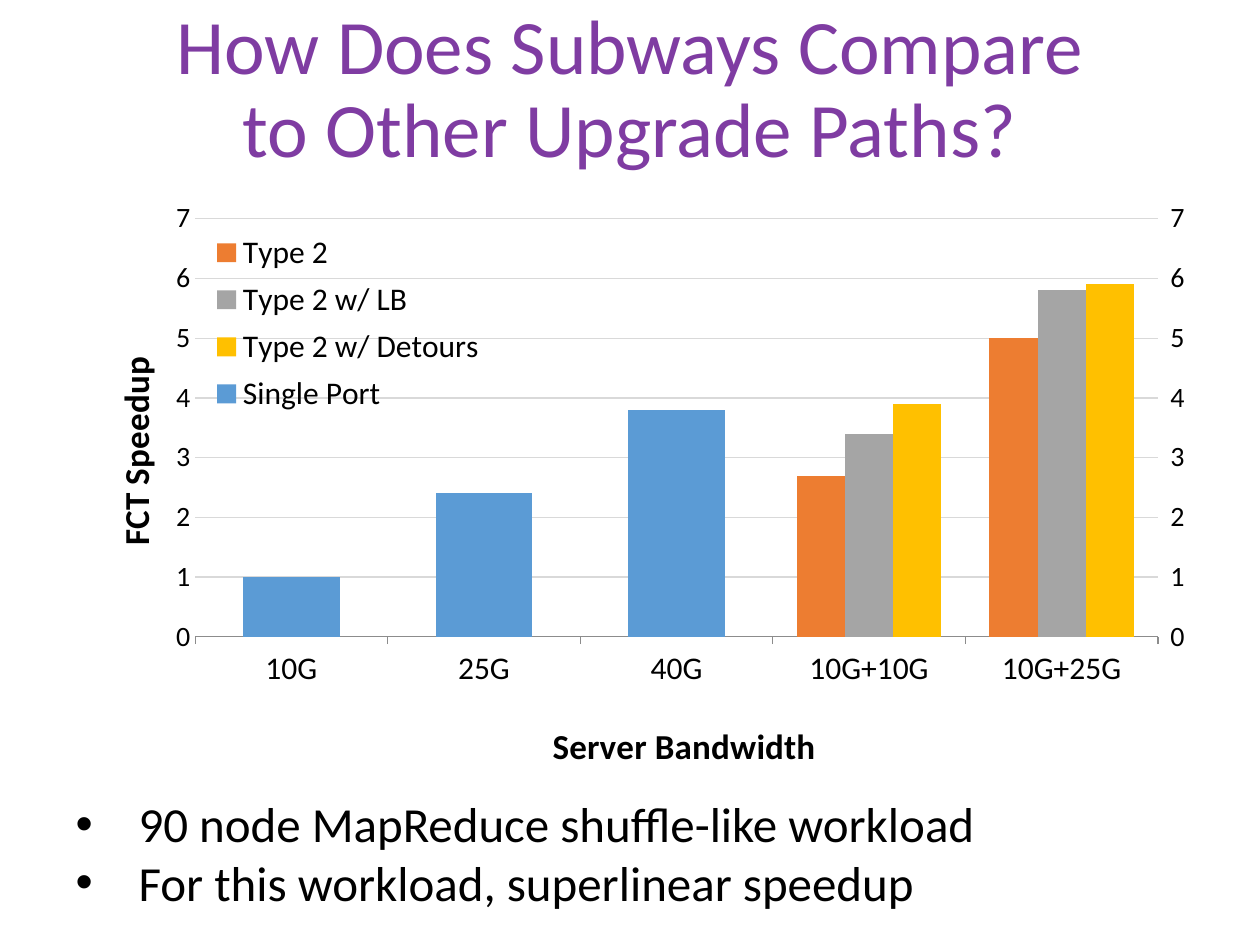
from copy import deepcopy
from typing import NamedTuple, Optional

from lxml import etree
from pptx import Presentation
from pptx import util as u
from pptx.chart.data import CategoryChartData
from pptx.dml.color import RGBColor
from pptx.enum import chart as ch, text
from pptx.oxml import parse_xml
from pptx.oxml.ns import nsdecls, qn

FONT = "Calibri"
COLORS = {
    "title": "7F3CA2", "text": "000000", "grid": "D9D9D9", "axis": "8C8C8C",
    "orange": "ED7D31", "gray": "A5A5A5", "yellow": "FFC000", "blue": "5B9BD5",
}
COLUMNS, ROWS = 10, 30


class Box(NamedTuple):
    """Place on the slide, in grid columns and rows."""
    col: float
    row: float
    cols: float
    rows: float


class Series(NamedTuple):
    name: str
    values: tuple[Optional[float], ...]
    color: str


CATEGORIES = ("10G", "25G", "40G", "10G+10G", "10G+25G")
SERIES = (
    Series("Type 2", (None, None, None, 2.7, 5), "orange"),
    Series("Type 2 w/ LB", (None, None, None, 3.4, 5.8), "gray"),
    Series("Type 2 w/ Detours", (None, None, None, 3.9, 5.9), "yellow"),
    Series("Single Port", (1, 2.4, 3.8, None, None), "blue"),
)
BULLETS = (
    "90 node MapReduce shuffle-like workload",
    "For this workload, superlinear speedup",
)


def rgb(name: str) -> RGBColor:
    return RGBColor.from_string(COLORS[name])


def lengths(prs, box: Box) -> tuple[int, ...]:
    w, h = prs.slide_width / COLUMNS, prs.slide_height / ROWS
    return tuple(round(n) for n in (box.col * w, box.row * h, box.cols * w, box.rows * h))


def place(prs, sp, box: Box) -> None:
    sp.left, sp.top, sp.width, sp.height = lengths(prs, box)


def style(font, size: float, color: str = "text", bold: bool = False) -> None:
    font.name, font.size, font.bold = FONT, u.Pt(size), bold
    font.color.rgb = rgb(color)


def set_layout(parent, index: int, inner: bool = False, **shares: float) -> None:
    """Fix the position of a chart part, in shares of the chart's size."""
    for old in parent.findall(qn("c:layout")):
        parent.remove(old)
    target = '<c:layoutTarget val="inner"/>' if inner else ""
    modes = "".join(f'<c:{k}Mode val="edge"/>' for k in "xy")
    values = "".join(f'<c:{k} val="{v}"/>' for k, v in shares.items())
    parent.insert(index, parse_xml(
        f'<c:layout {nsdecls("c")}><c:manualLayout>{target}{modes}{values}'
        "</c:manualLayout></c:layout>"))


def set_axis_title(axis, title: str, x: float, y: float) -> None:
    axis.has_title = True
    tf = axis.axis_title.text_frame
    tf.text = title
    style(tf.paragraphs[0].runs[0].font, 20, bold=True)
    set_layout(axis.axis_title._element, 1, x=x, y=y)


def move_last_series_right(chart) -> None:
    """Give the last series its own bar group and a value axis on the right."""
    area = chart._chartSpace.chart.plotArea
    bars = area.find(qn("c:barChart"))
    right_bars = deepcopy(bars)
    bars.remove(bars.findall(qn("c:ser"))[-1])
    for ser in right_bars.findall(qn("c:ser"))[:-1]:
        right_bars.remove(ser)
    bars.addnext(right_bars)

    cat, val = area.find(qn("c:catAx")), area.find(qn("c:valAx"))
    right_cat, right_val = deepcopy(cat), deepcopy(val)
    val.addnext(right_val)
    right_val.addnext(right_cat)
    ids = {cat.find(qn("c:axId")).get("val"): "5001",
           val.find(qn("c:axId")).get("val"): "5002"}
    for group in (right_bars, right_cat, right_val):
        for tag in ("c:axId", "c:crossAx"):
            for el in group.findall(qn(tag)):
                el.set("val", ids[el.get("val")])
    for axis in (right_cat, right_val):
        for tag in ("c:majorGridlines", "c:title"):
            for el in axis.findall(qn(tag)):
                axis.remove(el)
    right_cat.find(qn("c:delete")).set("val", "1")
    right_val.find(qn("c:axPos")).set("val", "r")
    right_val.find(qn("c:majorTickMark")).set("val", "out")
    right_val.find(qn("c:crosses")).set("val", "max")


def add_speedup_chart(prs, s, box: Box) -> None:
    data = CategoryChartData()
    data.categories = CATEGORIES
    for item in SERIES:
        data.add_series(item.name, item.values)
    chart = s.shapes.add_chart(
        ch.XL_CHART_TYPE.COLUMN_CLUSTERED, *lengths(prs, box), data).chart
    chart.has_title = False
    style(chart.font, 16)

    # Bars
    plot = chart.plots[0]
    plot.gap_width, plot.overlap, plot.vary_by_categories = 100, 0, False
    for series, item in zip(plot.series, SERIES):
        series.format.fill.solid()
        series.format.fill.fore_color.rgb = rgb(item.color)
        series.invert_if_negative = False

    # Axes
    cat, val = chart.category_axis, chart.value_axis
    style(cat.tick_labels.font, 18)
    cat.major_tick_mark = ch.XL_TICK_MARK.OUTSIDE
    cat.format.line.color.rgb = rgb("axis")
    cat.format.line.width = u.Pt(0.75)
    style(val.tick_labels.font, 16)
    val.minimum_scale, val.maximum_scale, val.major_unit = 0, 7, 1
    val.major_tick_mark = ch.XL_TICK_MARK.NONE
    val.format.line.fill.background()
    val.major_gridlines.format.line.color.rgb = rgb("grid")
    val.major_gridlines.format.line.width = u.Pt(0.75)
    set_axis_title(cat, "Server Bandwidth", 0.42, 0.88)
    set_axis_title(val, "FCT Speedup", 0.03, 0.27)
    move_last_series_right(chart)

    # Legend over the upper left of the plot
    chart.has_legend = True
    legend = chart.legend
    legend.position = ch.XL_LEGEND_POSITION.CORNER
    legend.include_in_layout = True
    style(legend.font, 18)
    set_layout(legend._element, 1, x=0.11, y=0.06, w=0.27, h=0.33)
    set_layout(chart._chartSpace.chart.plotArea, 0, inner=True,
               x=0.11, y=0.05, w=0.85, h=0.7)


def fill_title(prs, sp, box: Box) -> None:
    place(prs, sp, box)
    tf = sp.text_frame
    tf.text = "How Does Subways Compare\vto Other Upgrade Paths?"
    tf.auto_size = text.MSO_AUTO_SIZE.NONE
    tf.vertical_anchor = text.MSO_ANCHOR.MIDDLE
    p = tf.paragraphs[0]
    p.alignment, p.line_spacing = text.PP_ALIGN.CENTER, 0.9
    for r in p.runs:
        style(r.font, 44, "title")


def fill_bullets(prs, sp, box: Box) -> None:
    place(prs, sp, box)
    tf = sp.text_frame
    tf.text = "\n".join(BULLETS)
    tf.auto_size = text.MSO_AUTO_SIZE.NONE
    indent = u.Inches(0.5)
    for p in tf.paragraphs:
        pPr = p._p.get_or_add_pPr()
        pPr.set("marL", str(indent))
        pPr.set("indent", str(-indent))
        etree.SubElement(pPr, qn("a:buFont")).set("typeface", "Arial")
        etree.SubElement(pPr, qn("a:buChar")).set("char", "•")
        p.space_before = u.Pt(0)
        style(p.runs[0].font, 28)


def main() -> None:
    prs = Presentation()
    prs.slide_width, prs.slide_height = u.Inches(10), u.Inches(7.5)
    s = prs.slides.add_slide(prs.slide_layouts[1])
    fill_title(prs, s.shapes.title, Box(0, 0, 10, 5.8))
    add_speedup_chart(prs, s, Box(0.56, 6, 8.99, 18.96))
    fill_bullets(prs, s.placeholders[1], Box(0.5, 25, 8.99, 5))
    prs.save("out.pptx")


if __name__ == "__main__":
    main()
